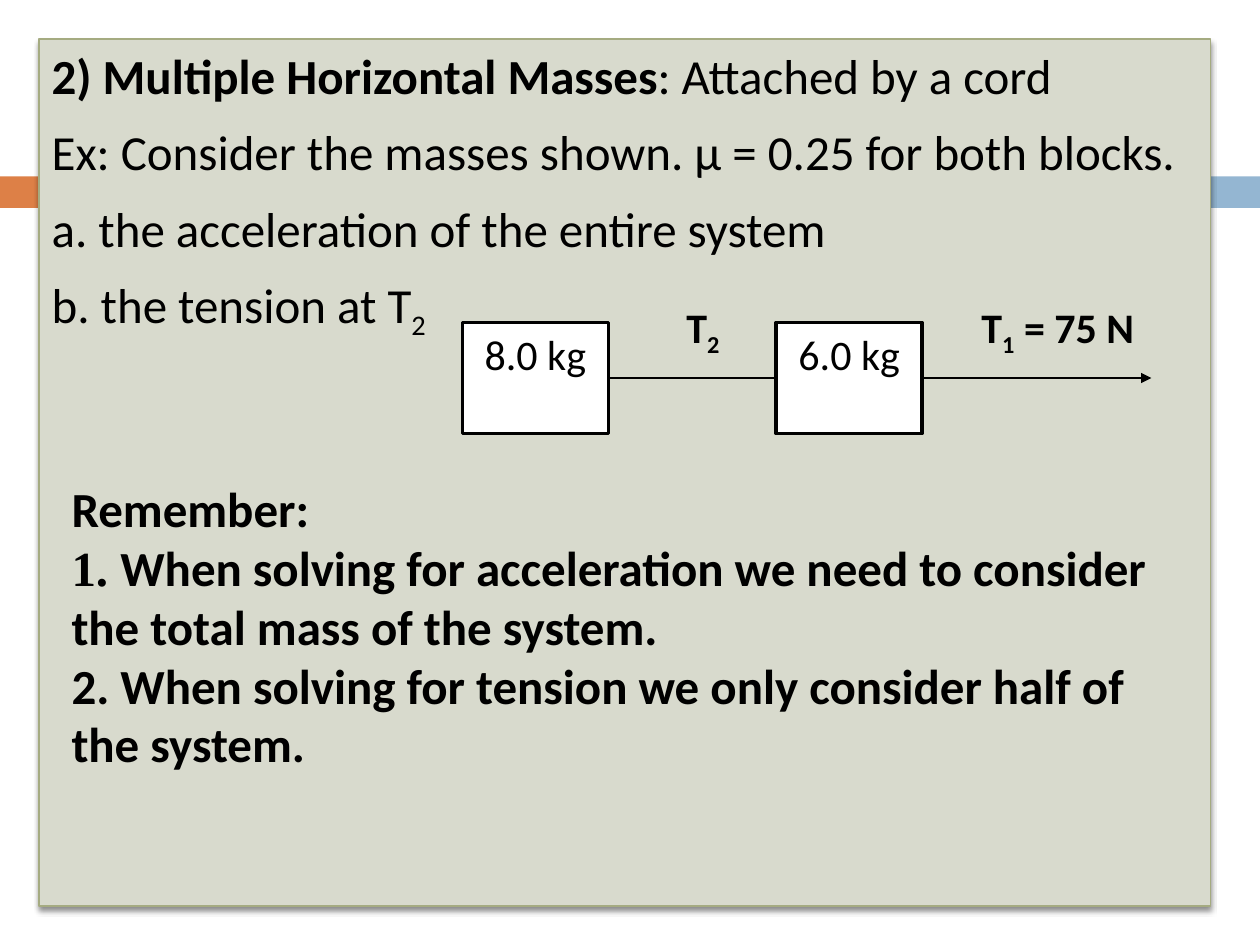
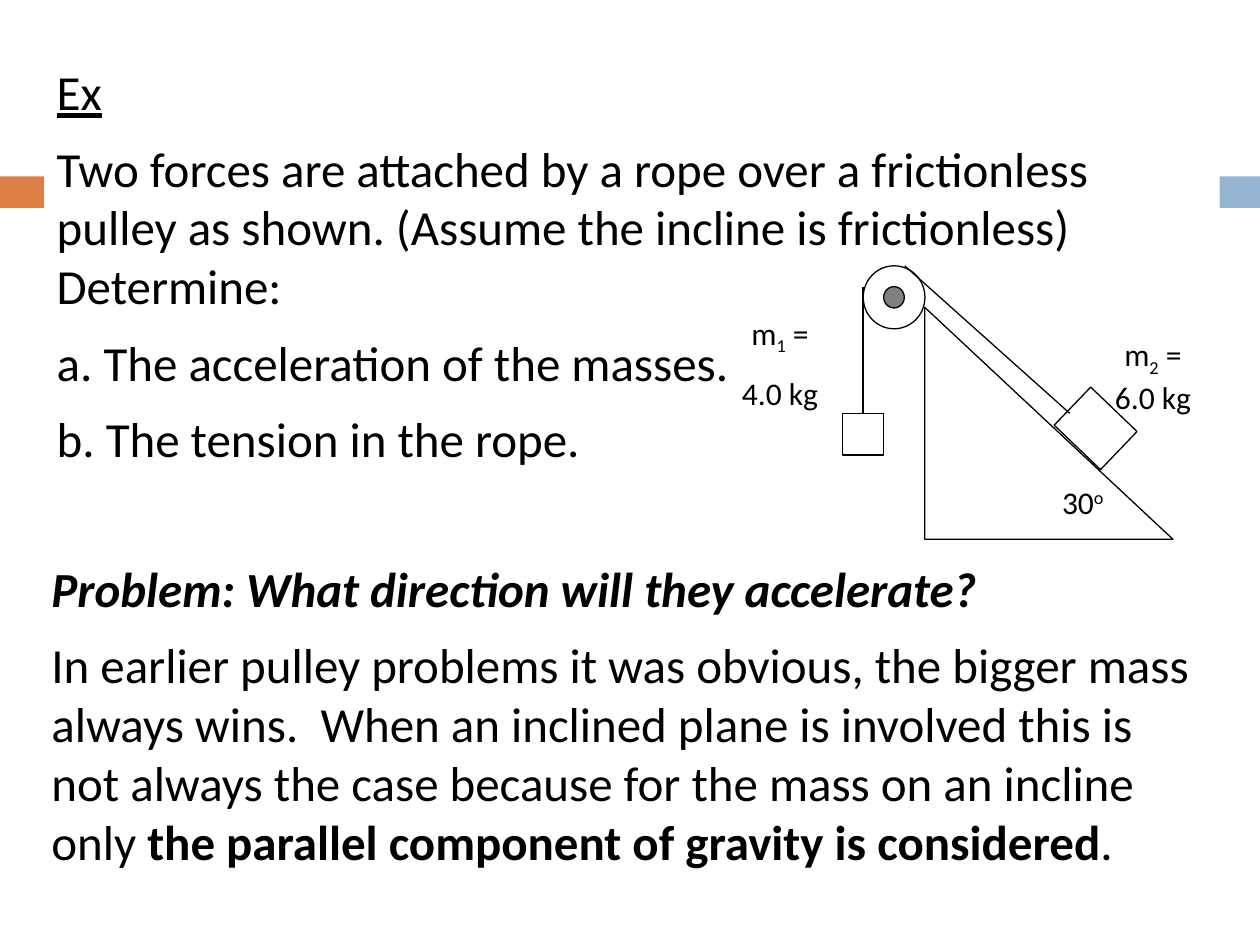
from lxml import etree
from pptx import Presentation
from pptx.dml.color import RGBColor
from pptx.enum import shapes, text
from pptx.oxml import ns
from pptx.util import Pt

# Theme: colours, fonts and sizes in points
THEME = {
    "font": "Calibri", "serif": "Times New Roman",
    "body": 28, "mass": 24, "small": 18, "after": 10,
    "ink": "000000", "paper": "FFFFFF", "panel": "D8DACD", "edge": "A5AB81",
    "orange": "DD8047", "blue": "94B6D2", "hub": "808080",
    "thin": 0.75, "thick": 2,
}
BANDS = [((0, 100.8, 41.8, 18), "orange"), ((46.8, 100.8, 673.2, 18), "blue")]
SHAPE = shapes.MSO_SHAPE
CENTER = text.PP_ALIGN.CENTER

# Run formats
B = {"bold": True}
BI = {"bold": True, "italic": True}
U = {"underline": True}
SERIF = {"bold": True, "name": THEME["serif"]}
SUB, BSUB, SUP = {"baseline": -25}, {"bold": True, "baseline": -25}, {"baseline": 30}

# Content: lists of paragraphs, each a list of (words, format) runs
CORD_TASK = [
    [("2) Multiple Horizontal Masses", B), (": Attached by a cord", {})],
    [("Ex: Consider the masses shown. µ = 0.25 for both blocks.", {})],
    [("a. the acceleration of the entire system", {})],
    [("b. the tension at T", {}), ("2", SUB)],
]
CORD_MASSES = ["8.0 kg", "6.0 kg"]
T1 = [[("T", B), ("1", BSUB), (" = 75 N", B)]]
T2 = [[("T", B), ("2", BSUB)]]
REMEMBER = [[
    ("Remember: \n", B), ("1. ", SERIF),
    ("When solving for acceleration we need to consider the total mass of the "
     "system.\n2. When solving for tension we only consider half of the system.", B),
]]
INCLINE_TASK = [
    [("Ex", U)],
    [("Two forces are attached by a rope over a frictionless pulley as shown. "
      "(Assume the incline is frictionless) Determine:", {})],
    [("a. The acceleration of the masses.", {})],
    [("b. The tension in the rope.", {})],
]
M1 = [[("m", {}), ("1", SUB), (" =", {})], [("4.0 kg", {})]]
M2 = [[("m", {}), ("2", SUB), (" = 6.0 kg", {})]]
ANGLE = [[("30", {}), ("o", SUP)]]
PROBLEM = [
    [("Problem: What direction will they accelerate?", BI)],
    [("In earlier pulley problems it was obvious, the bigger mass always wins.  "
      "When an inclined plane is involved this is not always the case because "
      "for the mass on an incline only ", {}),
     ("the parallel component of gravity is considered", B), (".", {})],
]


# Helpers
def color(name):
    return RGBColor.from_string(THEME[name])


def add_xml(parent, tag, **attrs):
    el = etree.SubElement(parent, ns.qn(tag))
    for key, value in attrs.items():
        el.set(key, str(value))
    return el


def add_run(p, words, fmt, size):
    r = p.add_run()
    r.text = words
    r.font.color.rgb = color("ink")
    values = {"name": THEME["font"], "size": Pt(size), "bold": False, **fmt}
    baseline = values.pop("baseline", None)
    for key, value in values.items():
        setattr(r.font, key, value)
    if baseline:
        r._r.get_or_add_rPr().set("baseline", str(baseline * 1000))


def write(sp, paragraphs, size, align=text.PP_ALIGN.LEFT):
    tf = sp.text_frame
    frame = {"word_wrap": True, "auto_size": text.MSO_AUTO_SIZE.NONE,
             "vertical_anchor": text.MSO_ANCHOR.TOP}
    for key, value in frame.items():
        setattr(tf, key, value)
    for i, runs in enumerate(paragraphs):
        p = tf.add_paragraph() if i else tf.paragraphs[0]
        layout = {"alignment": align, "space_before": Pt(0),
                  "space_after": Pt(THEME["after"]), "line_spacing": 1.0}
        for key, value in layout.items():
            setattr(p, key, value)
        pPr = p._p.get_or_add_pPr()
        pPr.set("marL", "0")
        pPr.set("indent", "0")
        add_xml(pPr, "a:buNone")
        for words, fmt in runs:
            for n, part in enumerate(words.split("\n")):
                if n:
                    p.add_line_break()
                if part:
                    add_run(p, part, fmt, size)


def paint(sp, fill, line=None, width=THEME["thin"]):
    sp.fill.solid()
    sp.fill.fore_color.rgb = color(fill)
    if line:
        sp.line.color.rgb = color(line)
        sp.line.width = Pt(width)
    else:
        sp.line.fill.background()


def add_shape(s, kind, box, fill="paper", line="ink", width=THEME["thin"]):
    sp = s.shapes.add_shape(kind, *map(Pt, box))
    sp.shadow.inherit = False
    paint(sp, fill, line, width)
    return sp


def add_label(s, box, paragraphs, size, align=text.PP_ALIGN.LEFT):
    write(s.shapes.add_textbox(*map(Pt, box)), paragraphs, size, align)


def add_line(s, x1, y1, x2, y2, arrow=False):
    ln = s.shapes.add_connector(shapes.MSO_CONNECTOR.STRAIGHT,
                                *map(Pt, (x1, y1, x2, y2)))
    ln.line.color.rgb = color("ink")
    ln.line.width = Pt(THEME["thin"])
    if arrow:
        add_xml(ln.line._get_or_add_ln(), "a:tailEnd", type="triangle")
    add_xml(ln._element.spPr, "a:effectLst")


def add_slide(prs, box, paragraphs, fill, line=None):
    """Slide with the two bands behind a filled body placeholder."""
    s = prs.slides.add_slide(prs.slide_layouts[1])
    title, body = s.placeholders
    title._element.getparent().remove(title._element)
    for band, fill_name in BANDS:
        add_shape(s, SHAPE.RECTANGLE, band, fill_name, None)
    s.shapes._spTree.append(body._element)
    for key, value in zip(("left", "top", "width", "height"), box):
        setattr(body, key, Pt(value))
    paint(body, fill, line, 0.79)
    write(body, paragraphs, THEME["body"])
    return s, body


def add_shadow(sp):
    effects = add_xml(sp._element.spPr, "a:effectLst")
    shadow = add_xml(effects, "a:outerShdw", blurRad=Pt(3), dist=Pt(2.4),
                     dir=90 * 60000, algn="ctr", rotWithShape=0)
    add_xml(add_xml(shadow, "a:srgbClr", val=THEME["ink"]), "a:alpha", val=45000)


# Slide 1: two blocks pulled along by a cord
def cord_slide(prs):
    s, panel = add_slide(prs, (22.3, 22.3, 669.6, 495.4), CORD_TASK, "panel", "edge")
    add_shadow(panel)
    x0, y, w, h, pitch, arrow_end = 264.2, 184.3, 83.5, 63.4, 179.3, 658
    for i, mass in enumerate(CORD_MASSES):
        x = x0 + i * pitch
        last = i == len(CORD_MASSES) - 1
        block = add_shape(s, SHAPE.RECTANGLE, (x, y, w, h), width=THEME["thick"])
        write(block, [[(mass, {})]], THEME["mass"], CENTER)
        mid = y + h / 2
        add_line(s, x + w, mid, arrow_end if last else x + pitch, mid, arrow=last)
    for box, label in [((550.8, 168.5, 107.3, h), T1), ((360, 168.5, w, h), T2)]:
        add_label(s, box, label, THEME["mass"], CENTER)
    add_label(s, (33.8, 270, 646.6, 168.5), REMEMBER, THEME["body"])


# Slide 2: hanging mass and a mass on an incline
def incline_slide(prs):
    s, _ = add_slide(prs, (25.2, 31.7, 671.8, 283.7), INCLINE_TASK, "paper")
    add_shape(s, SHAPE.RIGHT_TRIANGLE, (528.5, 175.7, 141.8, 132.5))
    cx, cy = 510.9, 169.9
    for w, h, fill in [(35.3, 36, "paper"), (11.8, 12.2, "hub")]:
        add_shape(s, SHAPE.OVAL, (cx - w / 2, cy - h / 2, w, h), fill)
    sliding = add_shape(s, SHAPE.RECTANGLE, (607.7, 229.7, 36.7, 30.2))
    sliding.rotation = 43.8
    rope_x, rope_end, side = 493.2, 236.2, 23.8
    add_line(s, 517, 151.9, 611.3, rope_end)
    add_line(s, rope_x, 164.2, rope_x, rope_end)
    add_shape(s, SHAPE.RECTANGLE, (rope_x - side / 2, rope_end, side, side))
    for box, label, align in [
        ((623.5, 187.9, 70.6, 60.5), M2, CENTER),
        ((410.4, 175.7, 70.6, 72), M1, CENTER),
        ((599.8, 272.2, 47.5, 48.2), ANGLE, text.PP_ALIGN.LEFT),
    ]:
        add_label(s, box, label, THEME["small"], align)
    add_label(s, (22.3, 315.4, 669.6, 202.3), PROBLEM, THEME["body"])


def main():
    prs = Presentation()
    prs.slide_width, prs.slide_height = Pt(720), Pt(540)
    cord_slide(prs)
    incline_slide(prs)
    prs.save("out.pptx")


if __name__ == "__main__":
    main()
